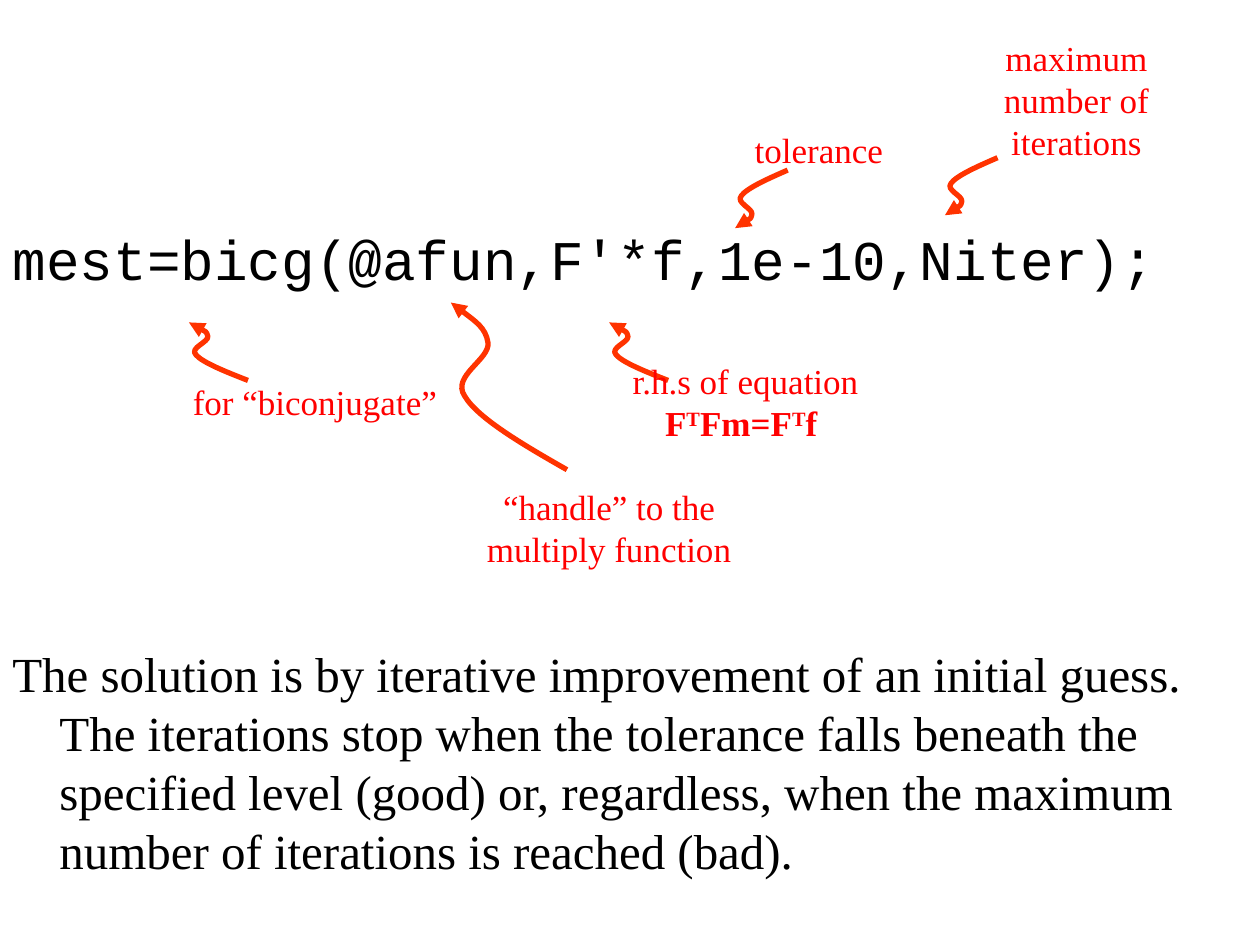
import pptx
import pptx.dml.color
import pptx.enum.text
import pptx.oxml.ns
import pptx.util
from lxml import etree

Cm, Pt = pptx.util.Cm, pptx.util.Pt
qn = pptx.oxml.ns.qn

BLACK = pptx.dml.color.RGBColor(0x00, 0x00, 0x00)
RED = pptx.dml.color.RGBColor(0xFF, 0x00, 0x00)
ORANGE = pptx.dml.color.RGBColor(0xFF, 0x33, 0x00)
SERIF, MONO = "Times New Roman", "Courier New"
LABEL_SIZE = (5.5, 2.33)

# Squiggle from tip (0, 0) to tail (1, 1): a start, then three Bezier triples
SQUIGGLE = [(0, 0), (0.15, 0.08), (0.3, 0.15), (0.32, 0.24),
            (0.34, 0.34), (0, 0.44), (0.12, 0.56),
            (0.23, 0.69), (0.62, 0.85), (1, 1)]

# Each callout: label's left and top, arrow tip, arrow tail, runs (text, bold, raised)
CALLOUTS = [
    ((3.6, 6.93), (3.81, 6.5), (5, 7.67), [("for “biconjugate”", False, False)]),
    ((9.53, 9.47), (9.09, 6.1), (11.43, 9.47),
     [("“handle” to the multiply function", False, False)]),
    ((12.28, 6.93), (12.28, 6.5), (13.47, 7.67),
     [("r.h.s of equation ", False, False), ("F", True, False), ("T", True, True),
      ("Fm=F", True, False), ("T", True, True), ("f ", True, False)]),
    ((13.76, 1.85), (14.82, 4.6), (15.88, 3.43), [("tolerance", False, False)]),
    ((18.95, 0.85), (19.05, 4.34), (20.11, 3.18),
     [("maximum number of iterations", False, False)]),
]


def add_run(p, text, font, size, color, bold=False, raised=False):
    r = p.add_run()
    r.text = text
    r.font.name, r.font.size, r.font.bold = font, Pt(size), bold
    r.font.color.rgb = color
    if raised:
        r.font._element.set("baseline", "30000")


def fill_hanging(sp, box, text, font, size):
    """Place a text shape and fill it with one unbulleted paragraph, hanging indent."""
    sp.left, sp.top, sp.width, sp.height = (Cm(v) for v in box)
    tf = sp.text_frame
    tf.word_wrap = True
    tf.auto_size = pptx.enum.text.MSO_AUTO_SIZE.NONE
    p = tf.paragraphs[0]
    pPr = p._p.get_or_add_pPr()
    pPr.set("marL", str(Cm(0.95)))
    pPr.set("indent", str(-Cm(0.95)))
    before = etree.SubElement(pPr, qn("a:spcBef"))
    etree.SubElement(before, qn("a:spcPct")).set("val", "20000")
    etree.SubElement(pPr, qn("a:buNone"))
    add_run(p, text, font, size, BLACK)


def add_label(s, corner, runs):
    sp = s.shapes.add_textbox(*(Cm(v) for v in corner + LABEL_SIZE))
    tf = sp.text_frame
    tf.word_wrap = True
    tf.vertical_anchor = pptx.enum.text.MSO_ANCHOR.MIDDLE
    p = tf.paragraphs[0]
    p.alignment = pptx.enum.text.PP_ALIGN.CENTER
    for text, bold, raised in runs:
        add_run(p, text, SERIF, 20, RED, bold, raised)


def add_squiggle(s, tip, tail):
    """Draw a curved arrow that points at tip."""
    points = [tuple(Cm(a + (b - a) * f) for a, b, f in zip(tip, tail, pt))
              for pt in SQUIGGLE]
    builder = s.shapes.build_freeform(*points[0])
    builder.add_line_segments(points[1:], close=False)
    sp = builder.convert_to_shape()
    sp.shadow.inherit = False
    sp.fill.background()
    sp.line.color.rgb = ORANGE
    sp.line.width = Pt(3)
    etree.SubElement(sp.line._get_or_add_ln(), qn("a:headEnd")).set("type", "triangle")

    # Join every three straight segments into one cubic curve
    lines = list(sp._element.iter(qn("a:lnTo")))
    for i in range(0, len(lines), 3):
        curve = etree.SubElement(lines[i].getparent(), qn("a:cubicBezTo"))
        for line in lines[i:i + 3]:
            curve.append(line[0])
            line.getparent().remove(line)


def add_callout(s, corner, tip, tail, runs):
    add_squiggle(s, tip, tail)
    add_label(s, corner, runs)


def main():
    prs = pptx.Presentation()
    prs.slide_width, prs.slide_height = Cm(25.4), Cm(19.05)
    s = prs.slides.add_slide(prs.slide_layouts[1])
    title = s.shapes.title._element
    title.getparent().remove(title)

    fill_hanging(s.placeholders[1], (0, 4.4, 25.4, 2.12),
                 "mest=bicg(@afun,F'*f,1e-10,Niter);", MONO, 32)
    for callout in CALLOUTS:
        add_callout(s, *callout)
    fill_hanging(s.shapes.add_textbox(0, 0, 0, 0), (0, 12.85, 25.4, 4.87),
                 "The solution is by iterative improvement of an initial guess. "
                 "The iterations stop when the tolerance falls beneath the "
                 "specified level (good) or, regardless, when the maximum "
                 "number of iterations is reached (bad).", SERIF, 28)
    prs.save("out.pptx")


if __name__ == "__main__":
    main()
